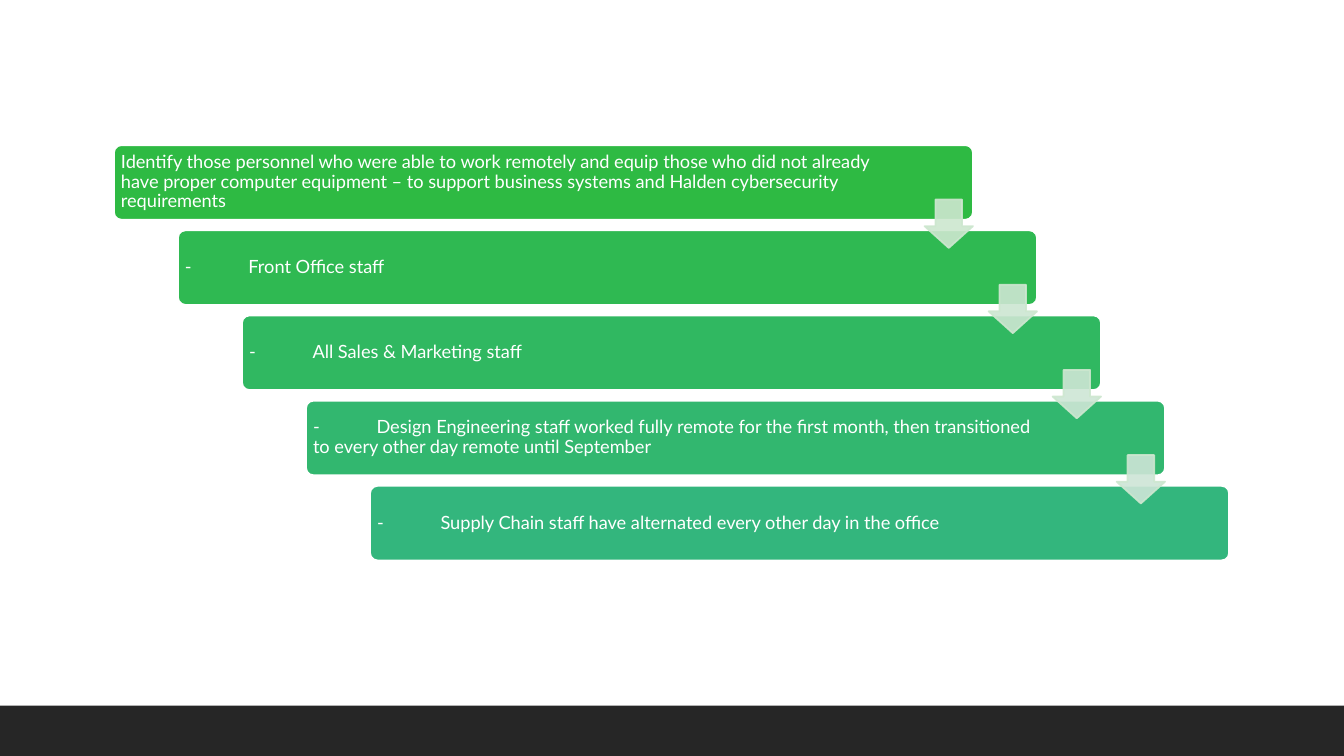
from dataclasses import dataclass

from lxml.etree import SubElement
from pptx import Presentation
from pptx.dml.color import RGBColor as RGB
from pptx.enum.shapes import MSO_SHAPE as SHAPE
from pptx.enum.text import MSO_ANCHOR as ANCHOR
from pptx.oxml.ns import qn
from pptx.util import Inches, Pt


@dataclass(frozen=True)
class Theme:
    font: str = "Lato"
    size: float = 13
    line_width: float = 1.25
    white: str = "FFFFFF"
    footer: str = "262626"
    arrow_line: str = "CDE7CF"
    steps: tuple = ("2EBA43", "2FB952", "30B861", "32B76F", "33B67D")
    arrows: tuple = ("CDE7CF", "CDE6D2", "CEE6D5", "CEE5D7")


THEME = Theme()
STEPS = (
    "Identify those personnel who were able to work remotely and equip those "
    "who did not already have proper computer equipment – to support business "
    "systems and Halden cybersecurity requirements",
    "-\tFront Office staff",
    "-\tAll Sales & Marketing staff",
    "-\tDesign Engineering staff worked fully remote for the first month, "
    "then transitioned to every other day remote until September",
    "-\tSupply Chain staff have alternated every other day in the office",
)


def add_box(slide, kind, box, fill, line=None, adjustments=()):
    sp = slide.shapes.add_shape(kind, *map(Inches, box))
    sp.shadow.inherit = False
    sp.fill.solid()
    sp.fill.fore_color.rgb = RGB.from_string(fill)
    if line:
        sp.line.color.rgb = RGB.from_string(line)
        sp.line.width = Pt(THEME.line_width)
    else:
        sp.line.fill.background()
    for i, value in enumerate(adjustments):
        sp.adjustments[i] = value
    return sp


def add_label(slide, box, text):
    tf = slide.shapes.add_textbox(*map(Inches, box)).text_frame
    tf.word_wrap = True
    tf.vertical_anchor = ANCHOR.MIDDLE
    tf.margin_left = tf.margin_right = Inches(0.05)
    tf.margin_top = tf.margin_bottom = Inches(0.05)
    p = tf.paragraphs[0]
    p.text = text
    p.line_spacing = 0.9
    tabs = SubElement(p._p.get_or_add_pPr(), qn("a:tabLst"))
    SubElement(tabs, qn("a:tab"), pos=str(Inches(0.63)), algn="l")
    p.font.name = THEME.font
    p.font.size = Pt(THEME.size)
    p.font.color.rgb = RGB.from_string(THEME.white)


def add_step(slide, box, text, fill, label_width):
    x, y, w, h = box
    add_box(slide, SHAPE.ROUNDED_RECTANGLE, box, fill, THEME.white, (0.1,))
    add_label(slide, (x + 0.02, y + 0.02, label_width, h - 0.04), text)


def add_arrow(slide, box, fill):
    sp = add_box(slide, SHAPE.DOWN_ARROW, box, fill, THEME.arrow_line, (0.55, 0.45))
    for color in sp._element.spPr.iter(qn("a:srgbClr")):
        SubElement(color, qn("a:alpha"), val="90000")


def add_staircase(slide, box):
    x, y, w, h = box
    step_w, step_h, arrow = 8.52, 0.74, 0.48
    dx = (w - step_w) / (len(STEPS) - 1)
    dy = (h - step_h) / (len(STEPS) - 1)
    for i, (text, fill) in enumerate(zip(STEPS, THEME.steps)):
        label_width = 7.36 if i else 7.63
        add_step(slide, (x + i * dx, y + i * dy, step_w, step_h), text, fill, label_width)
    for i, fill in enumerate(THEME.arrows):
        left = x + i * dx + step_w - arrow
        add_arrow(slide, (left, y + i * dy + 0.54, arrow, arrow), fill)


def add_backdrop(slide, box):
    x, y, w, h = box
    footer_h = 0.5
    add_box(slide, SHAPE.RECTANGLE, box, THEME.white)
    add_box(slide, SHAPE.RECTANGLE, (x, y + h - footer_h, w, footer_h), THEME.footer)


def main():
    prs = Presentation()
    prs.slide_width, prs.slide_height = Inches(13.33), Inches(7.5)
    slide = prs.slides.add_slide(prs.slide_layouts[6])
    add_backdrop(slide, (0, 0, 13.33, 7.5))
    add_staircase(slide, (1.13, 1.44, 11.06, 4.12))
    prs.save("out.pptx")


if __name__ == "__main__":
    main()
